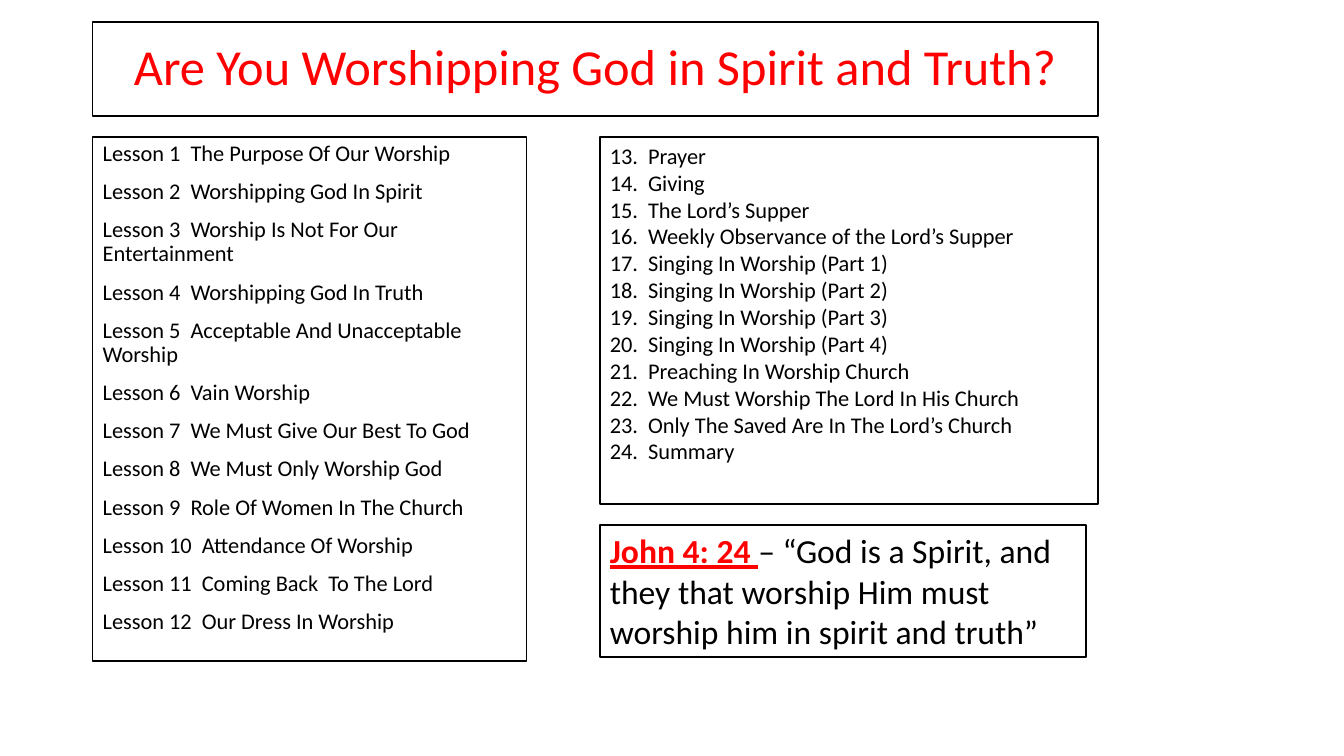
from lxml.etree import SubElement
from pptx import Presentation
from pptx.dml.color import RGBColor
from pptx.enum.text import MSO_ANCHOR, PP_ALIGN
from pptx.oxml.ns import qn
from pptx.util import Inches, Pt

HEADING = "Are You Worshipping God in Spirit and Truth?"
LESSONS = [
    "The Purpose Of Our Worship",
    "Worshipping God In Spirit",
    "Worship Is Not For Our Entertainment",
    "Worshipping God In Truth",
    "Acceptable And Unacceptable Worship",
    "Vain Worship",
    "We Must Give Our Best To God",
    "We Must Only Worship God",
    "Role Of Women In The Church",
    "Attendance Of Worship",
    "Coming Back  To The Lord",
    "Our Dress In Worship",
]
LATER_LESSONS = [
    "Prayer",
    "Giving",
    "The Lord’s Supper",
    "Weekly Observance of the Lord’s Supper",
    *[f"Singing In Worship (Part {part})" for part in range(1, 5)],
    "Preaching In Worship Church",
    "We Must Worship The Lord In His Church",
    "Only The Saved Are In The Lord’s Church",
    "Summary",
]
VERSE = "John 4: 24 "
QUOTE = "– “God is a Spirit, and they that worship Him must worship him in spirit and truth”"

RED, BLACK, WHITE = "FF0000", "000000", "FFFFFF"
WIDTH, HEIGHT = 13.33, 7.5
LEFT, MIDDLE, RIGHT = 0.92, 5.95, 10.89
GAP = 0.21
HEADING_TOP, HEADING_HEIGHT = 0.22, 0.93
LISTS_TOP = HEADING_TOP + HEADING_HEIGHT + GAP
LATER_HEIGHT = 3.64
VERSE_TOP = LISTS_TOP + LATER_HEIGHT + GAP
INDENT = 0.38


def color(value):
    return RGBColor.from_string(value)


def add_panel(left, top, width, height, anchor=MSO_ANCHOR.TOP):
    panel = slide.shapes.add_textbox(*map(Inches, (left, top, width, height)))
    panel.fill.solid()
    panel.fill.fore_color.rgb = color(WHITE)
    panel.line.color.rgb = color(BLACK)
    panel.line.width = Pt(1)
    panel.text_frame.word_wrap = True
    panel.text_frame.vertical_anchor = anchor
    return panel.text_frame


def add_paragraph(frame, index=0, align=PP_ALIGN.LEFT, spacing=1.0, before=0):
    paragraph = frame.add_paragraph() if index else frame.paragraphs[0]
    paragraph.alignment = align
    paragraph.line_spacing = spacing
    paragraph.space_before = Pt(before)
    return paragraph


def write(paragraph, text, size=16, ink=BLACK, bold=False, underline=False):
    run = paragraph.add_run()
    run.text = text
    run.font.name = "Calibri"
    run.font.size = Pt(size)
    run.font.color.rgb = color(ink)
    run.font.bold = bold
    run.font.underline = underline


def number(paragraph, start):
    properties = paragraph._p.get_or_add_pPr()
    properties.set("marL", str(Inches(INDENT)))
    properties.set("indent", str(Inches(-INDENT)))
    SubElement(properties, qn("a:buFont"), typeface="+mj-lt")
    SubElement(properties, qn("a:buAutoNum"), type="arabicPeriod", startAt=str(start))


deck = Presentation()
deck.slide_width, deck.slide_height = Inches(WIDTH), Inches(HEIGHT)
slide = deck.slides.add_slide(deck.slide_layouts[6])

heading = add_panel(LEFT, HEADING_TOP, RIGHT - LEFT, HEADING_HEIGHT, MSO_ANCHOR.MIDDLE)
write(add_paragraph(heading, align=PP_ALIGN.CENTER, spacing=0.9), HEADING, size=36, ink=RED)

lessons = add_panel(LEFT, LISTS_TOP, 4.3, 5.2)
for index, lesson in enumerate(LESSONS):
    line = add_paragraph(lessons, index, spacing=0.9, before=10)
    write(line, f"Lesson {index + 1}  {lesson}")

later_lessons = add_panel(MIDDLE, LISTS_TOP, RIGHT - MIDDLE, LATER_HEIGHT)
for index, lesson in enumerate(LATER_LESSONS):
    line = add_paragraph(later_lessons, index)
    number(line, len(LESSONS) + 1)
    write(line, lesson)

scripture = add_paragraph(add_panel(MIDDLE, VERSE_TOP, 4.82, 1.31))
write(scripture, VERSE, size=24, ink=RED, bold=True, underline=True)
write(scripture, QUOTE, size=24)

deck.save("out.pptx")
